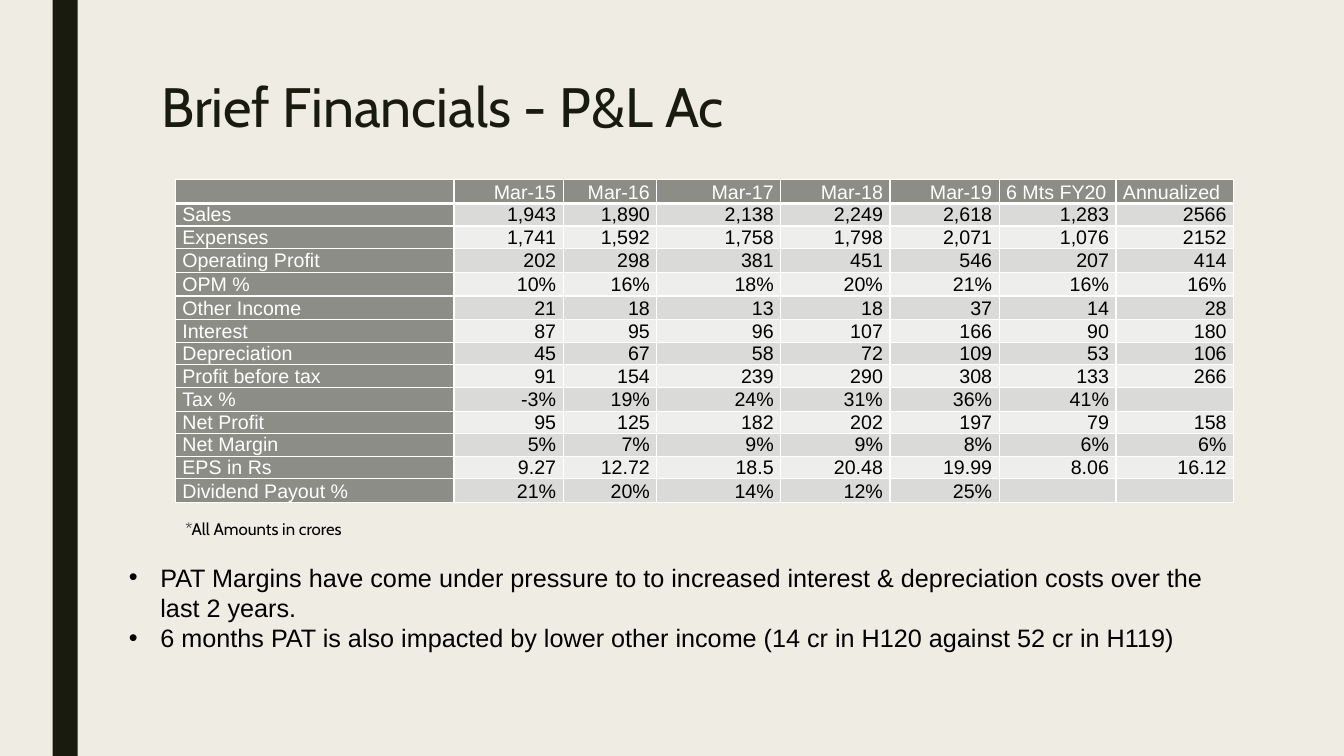
from dataclasses import dataclass

from lxml import etree
from pptx import Presentation
from pptx.dml.color import RGBColor
from pptx.enum.shapes import MSO_SHAPE
from pptx.enum.text import MSO_ANCHOR, MSO_AUTO_SIZE, PP_ALIGN
from pptx.oxml.ns import qn
from pptx.util import Pt

RECTANGLE = MSO_SHAPE.RECTANGLE
TOP, BOTTOM = MSO_ANCHOR.TOP, MSO_ANCHOR.BOTTOM
LEFT, RIGHT = PP_ALIGN.LEFT, PP_ALIGN.RIGHT
FIXED_SIZE = MSO_AUTO_SIZE.NONE
TITLE_ONLY = 5


@dataclass(frozen=True)
class Theme:
    """Colours, fonts and type sizes of the deck."""
    paper: str = "EFEDE3"
    ink: str = "191B0E"
    black: str = "000000"
    white: str = "FFFFFF"
    heading_fill: str = "8C8D86"
    bands: tuple = ("DADBD9", "EEEEED")
    display_font: str = "Cabin"
    body_font: str = "Arial"
    title_size: float = 39.6
    bullet_size: int = 18
    table_size: int = 14
    footnote_size: int = 12
    border: int = 1
    header_border: int = 3


THEME = Theme()
PERIODS = ["", "Mar-15", "Mar-16", "Mar-17", "Mar-18", "Mar-19", "6 Mts FY20", "Annualized"]
RESULTS = [
    ["Sales", "1,943", "1,890", "2,138", "2,249", "2,618", "1,283", "2566"],
    ["Expenses", "1,741", "1,592", "1,758", "1,798", "2,071", "1,076", "2152"],
    ["Operating Profit", "202", "298", "381", "451", "546", "207", "414"],
    ["OPM %", "10%", "16%", "18%", "20%", "21%", "16%", "16%"],
    ["Other Income", "21", "18", "13", "18", "37", "14", "28"],
    ["Interest", "87", "95", "96", "107", "166", "90", "180"],
    ["Depreciation", "45", "67", "58", "72", "109", "53", "106"],
    ["Profit before tax", "91", "154", "239", "290", "308", "133", "266"],
    ["Tax %", "-3%", "19%", "24%", "31%", "36%", "41%", ""],
    ["Net Profit", "95", "125", "182", "202", "197", "79", "158"],
    ["Net Margin", "5%", "7%", "9%", "9%", "8%", "6%", "6%"],
    ["EPS in Rs", "9.27", "12.72", "18.5", "20.48", "19.99", "8.06", "16.12"],
    ["Dividend Payout %", "21%", "20%", "14%", "12%", "25%", "", ""],
]
COLUMN_WIDTHS = [199, 78, 67, 88.5, 78, 78, 83.5, 84]
ROW_HEIGHT, TALL_ROW_HEIGHT = 16.1, 17
TALL_ROWS = range(3, 6)
LEFT_HEADERS = ("6 Mts FY20", "Annualized")
TAKEAWAYS = [
    "PAT Margins have come under pressure to to increased interest & depreciation costs "
    "over the last 2 years.",
    "6 months PAT is also impacted by lower other income (14 cr in H120 against 52 cr in H119)",
]


def set_format(target, formats):
    """Set each attribute named in formats on the target."""
    for attribute, value in formats.items():
        setattr(target, attribute, value)


def place(shape, box):
    """Move a shape to a box of left, top, width and height in points."""
    set_format(shape, dict(zip(("left", "top", "width", "height"), map(Pt, box))))


def write(paragraph, text, font_name, size, colour):
    """Add one formatted run to a paragraph."""
    run = paragraph.add_run()
    run.text = text
    set_format(run.font, {"name": font_name, "size": Pt(size), "bold": False})
    run.font.color.rgb = RGBColor.from_string(colour)


def draw_rail(slide, box):
    """Draw the dark vertical rail."""
    rail = slide.shapes.add_shape(RECTANGLE, *map(Pt, box))
    rail.shadow.inherit = False
    rail.fill.solid()
    rail.fill.fore_color.rgb = RGBColor.from_string(THEME.ink)
    rail.line.fill.background()


def draw_title(slide, box, text):
    """Place and format the title placeholder."""
    title = slide.shapes.title
    place(title, box)
    set_format(title.text_frame, {"auto_size": FIXED_SIZE, "vertical_anchor": TOP,
                                  "word_wrap": True})
    heading = title.text_frame.paragraphs[0]
    set_format(heading, {"alignment": LEFT, "line_spacing": 0.89})
    write(heading, text, THEME.display_font, THEME.title_size, THEME.ink)


def set_borders(cell, top, bottom):
    """Give a cell white borders, with top and bottom widths in points."""
    properties = cell._tc.get_or_add_tcPr()
    widths = {"a:lnL": THEME.border, "a:lnR": THEME.border, "a:lnT": top, "a:lnB": bottom}
    for side, width in widths.items():
        line = etree.SubElement(properties, qn(side), w=str(Pt(width)))
        fill = etree.SubElement(line, qn("a:solidFill"))
        etree.SubElement(fill, qn("a:srgbClr"), val=THEME.white)


def fill_cell(cell, text, row, column):
    """Style one table cell by its place and write its text."""
    is_heading = row == 0 or column == 0
    set_borders(cell, THEME.header_border if row == 1 else THEME.border,
                THEME.header_border if row == 0 else THEME.border)
    cell.fill.solid()
    cell.fill.fore_color.rgb = RGBColor.from_string(
        THEME.heading_fill if is_heading else THEME.bands[(row - 1) % 2])
    set_format(cell, {"margin_left": Pt(5), "margin_right": Pt(5), "margin_top": 0,
                      "margin_bottom": 0, "vertical_anchor": BOTTOM})
    entry = cell.text_frame.paragraphs[0]
    entry.alignment = LEFT if column == 0 or text in LEFT_HEADERS else RIGHT
    if text:
        write(entry, text, THEME.body_font, THEME.table_size,
              THEME.white if is_heading else THEME.black)
    else:
        etree.SubElement(entry._p, qn("a:endParaRPr"), sz=str(THEME.table_size * 100))


def draw_results(slide, left, top):
    """Draw the profit and loss table from its top left corner."""
    rows = [PERIODS] + RESULTS
    heights = [TALL_ROW_HEIGHT if row in TALL_ROWS else ROW_HEIGHT for row in range(len(rows))]
    box = (left, top, sum(COLUMN_WIDTHS), sum(heights))
    table = slide.shapes.add_table(len(rows), len(PERIODS), *map(Pt, box)).table
    for column, width in zip(table.columns, COLUMN_WIDTHS):
        column.width = Pt(width)
    for row, (values, height) in enumerate(zip(rows, heights)):
        table.rows[row].height = Pt(height)
        for column, text in enumerate(values):
            fill_cell(table.cell(row, column), text, row, column)


def draw_text(slide, box, lines, font_name, size, bullet_indent=0):
    """Draw a wrapped text box, with bullets if an indent is given."""
    frame = slide.shapes.add_textbox(*map(Pt, box)).text_frame
    set_format(frame, {"word_wrap": True, "auto_size": FIXED_SIZE})
    for index, text in enumerate(lines):
        paragraph = frame.add_paragraph() if index else frame.paragraphs[0]
        write(paragraph, text, font_name, size, THEME.black)
        if bullet_indent:
            properties = paragraph._p.get_or_add_pPr()
            properties.set("marL", str(Pt(bullet_indent)))
            properties.set("indent", str(-Pt(bullet_indent)))
            etree.SubElement(properties, qn("a:buFont"), typeface=THEME.body_font)
            etree.SubElement(properties, qn("a:buChar"), char="•")


def build_financials(deck):
    """Build the brief financials slide."""
    slide = deck.slides.add_slide(deck.slide_layouts[TITLE_ONLY])
    slide.background.fill.solid()
    slide.background.fill.fore_color.rgb = RGBColor.from_string(THEME.paper)
    draw_rail(slide, (37.5, 0, 18, 540))
    draw_title(slide, (108, 54, 756, 51), "Brief Financials - P&L Ac")
    draw_results(slide, 125.25, 128.25)
    draw_text(slide, (85, 398, 801, 117), TAKEAWAYS, THEME.body_font, THEME.bullet_size, 22.5)
    draw_text(slide, (125.25, 367, 195, 22), ["*All Amounts in crores"],
              THEME.display_font, THEME.footnote_size)


def main():
    """Create and save the deck."""
    deck = Presentation()
    set_format(deck, {"slide_width": Pt(960), "slide_height": Pt(540)})
    build_financials(deck)
    deck.save("out.pptx")


if __name__ == "__main__":
    main()
